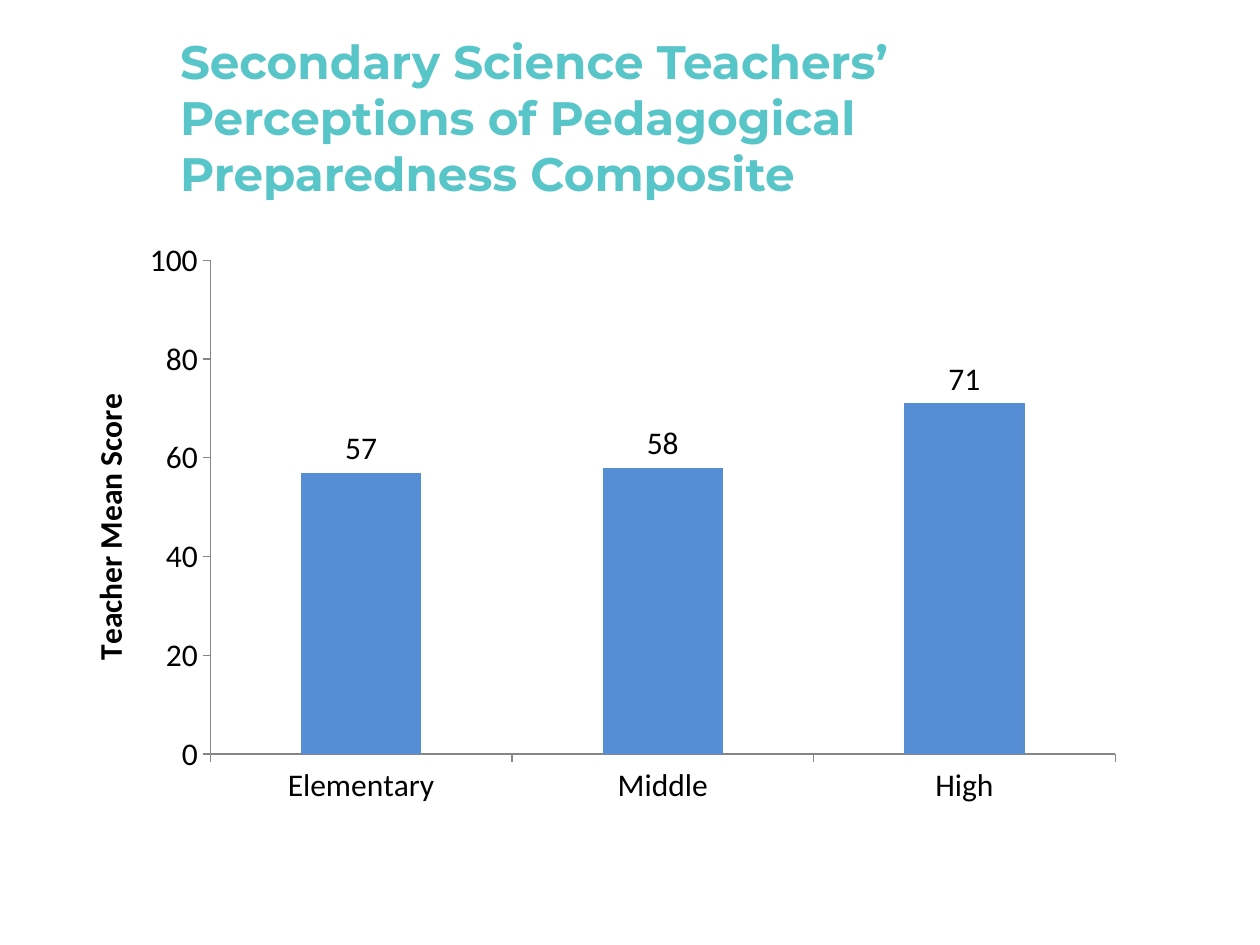
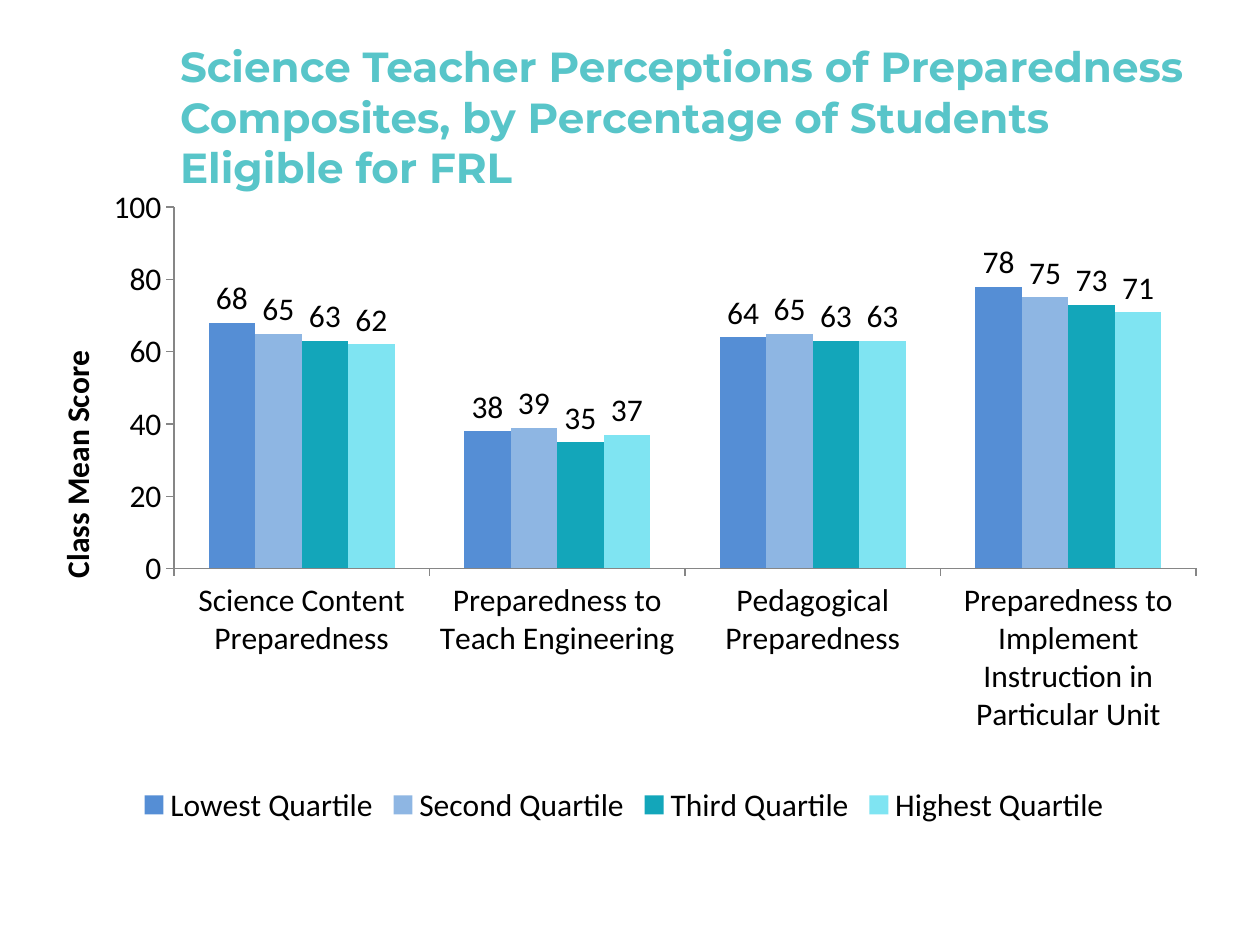
import pptx
import pptx.util
import pptx.chart.data
import pptx.dml.color
import pptx.enum.chart
import pptx.enum.text
import pptx.oxml
import pptx.oxml.ns
from pptx.util import Cm, Pt

TEAL, BLACK, AXIS_GREY = "58C5C9", "000000", "868686"
QUARTILE_COLOURS = ["558ED5", "8EB6E3", "13A6BA", "7FE4F2"]
TITLE_FONT, CHART_FONT = "Montserrat", "Calibri"
CHART_SIZE = 18
TITLE_BOX = (3.38, 0.76, 20.75, 3.18)


def colour(hex_string):
    return pptx.dml.color.RGBColor.from_string(hex_string)


def style_font(font, name, size, hex_string, bold=False):
    font.name = name
    font.size = Pt(size)
    font.bold = bold
    font.color.rgb = colour(hex_string)


def add_heading(slide, box, wording, size):
    heading = slide.shapes.add_textbox(*map(Cm, box)).text_frame
    heading.word_wrap = True
    heading.vertical_anchor = pptx.enum.text.MSO_ANCHOR.MIDDLE
    run = heading.paragraphs[0].add_run()
    run.text = wording
    style_font(run.font, TITLE_FONT, size, TEAL, bold=True)


def set_layout(parent, index, **settings):
    for old in parent.findall(pptx.oxml.ns.qn("c:layout")):
        parent.remove(old)
    entries = "".join(f'<c:{tag} val="{value}"/>' for tag, value in settings.items())
    parent.insert(index, pptx.oxml.parse_xml(
        f'<c:layout {pptx.oxml.ns.nsdecls("c")}><c:manualLayout>{entries}'
        "</c:manualLayout></c:layout>"))


def style_axis(axis):
    axis.has_major_gridlines = False
    axis.major_tick_mark = pptx.enum.chart.XL_TICK_MARK.OUTSIDE
    axis.minor_tick_mark = pptx.enum.chart.XL_TICK_MARK.NONE
    axis.format.line.color.rgb = colour(AXIS_GREY)
    axis.format.line.width = Pt(0.75)
    style_font(axis.tick_labels.font, CHART_FONT, CHART_SIZE, BLACK)


def title_score_axis(axis, wording, position):
    score_title = axis.axis_title
    frame = score_title.text_frame
    run = frame.paragraphs[0].add_run()
    run.text = wording
    style_font(run.font, CHART_FONT, CHART_SIZE, BLACK, bold=True)
    body = frame._txBody.find(pptx.oxml.ns.qn("a:bodyPr"))
    body.set("rot", "-5400000")
    body.set("vert", "horz")
    left, top = position
    set_layout(score_title._element, 1, xMode="edge", yMode="edge", x=left, y=top)


def add_score_chart(slide, box, groups, scores, axis_wording, axis_position,
                    plot_area, gap):
    data = pptx.chart.data.CategoryChartData(number_format="0")
    data.categories = groups
    for name, values in scores.items():
        data.add_series(name, values)
    chart = slide.shapes.add_chart(
        pptx.enum.chart.XL_CHART_TYPE.COLUMN_CLUSTERED, *map(Cm, box), data).chart
    style_font(chart.font, CHART_FONT, CHART_SIZE, BLACK)
    chart.has_title = False
    chart.has_legend = len(scores) > 1
    if chart.has_legend:
        chart.legend.position = pptx.enum.chart.XL_LEGEND_POSITION.BOTTOM
        chart.legend.include_in_layout = False
        style_font(chart.legend.font, CHART_FONT, CHART_SIZE, BLACK)

    style_axis(chart.category_axis)
    score_axis = chart.value_axis
    style_axis(score_axis)
    score_axis.minimum_scale, score_axis.maximum_scale = 0, 100
    score_axis.major_unit = 20
    title_score_axis(score_axis, axis_wording, axis_position)

    columns = chart.plots[0]
    columns.gap_width = gap
    columns.overlap = 0
    columns.vary_by_categories = False
    for series, fill in zip(columns.series, QUARTILE_COLOURS):
        series.format.fill.solid()
        series.format.fill.fore_color.rgb = colour(fill)
        series.invert_if_negative = False
        labels = series.data_labels
        labels.show_value = True
        labels.position = pptx.enum.chart.XL_LABEL_POSITION.OUTSIDE_END
        style_font(labels.font, CHART_FONT, CHART_SIZE, BLACK)

    left, top, width, height = plot_area
    set_layout(chart._chartSpace.xpath("c:chart/c:plotArea")[0], 0,
               layoutTarget="inner", xMode="edge", yMode="edge",
               x=left, y=top, w=width, h=height)


def build_grade_slide(slide):
    add_heading(slide, TITLE_BOX,
                "Secondary Science Teachers’ Perceptions of Pedagogical "
                "Preparedness Composite", 26.8)
    add_score_chart(slide, (0.43, 4.45, 24.56, 12.07),
                    ["Elementary", "Middle", "High"], {"Series 1": [57, 58, 71]},
                    "Teacher Mean Score", (0.05, 0.28),
                    (0.155, 0.066, 0.743, 0.825), 151)


def build_quartile_slide(slide):
    composites = ["Science Content Preparedness",
                  "Preparedness to Teach Engineering",
                  "Pedagogical Preparedness",
                  "Preparedness to Implement Instruction in Particular Unit"]
    quartiles = {"Lowest Quartile": [68, 38, 64, 78],
                 "Second Quartile": [65, 39, 65, 75],
                 "Third Quartile": [63, 35, 63, 73],
                 "Highest Quartile": [62, 37, 63, 71]}
    add_score_chart(slide, (0.64, 3.61, 23.88, 13.13), composites, quartiles,
                    "Class Mean Score", (0.015, 0.255),
                    (0.12, 0.043, 0.863, 0.555), 150)
    add_heading(slide, TITLE_BOX,
                "Science Teacher Perceptions of Preparedness Composites, by "
                "Percentage of Students Eligible for FRL", 24)


def main():
    deck = pptx.Presentation()
    deck.slide_width, deck.slide_height = Cm(25.4), Cm(19.05)
    for build in (build_grade_slide, build_quartile_slide):
        build(deck.slides.add_slide(deck.slide_layouts[6]))
    deck.save("out.pptx")


if __name__ == "__main__":
    main()
